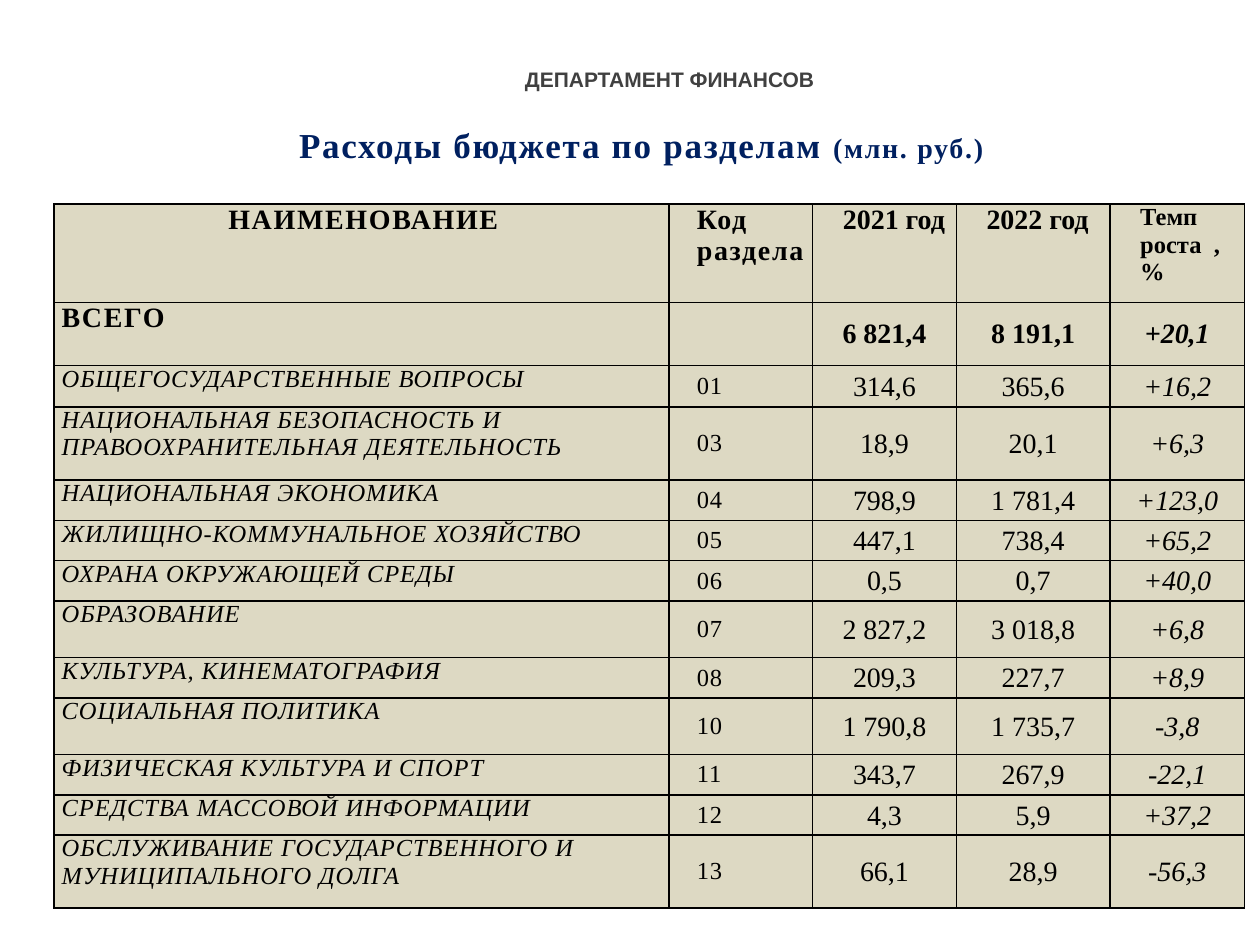
from collections import namedtuple
from dataclasses import dataclass

from lxml import etree
from pptx import Presentation
from pptx.dml.color import RGBColor
from pptx.enum.text import MSO_ANCHOR, PP_ALIGN
from pptx.oxml.ns import qn
from pptx.util import Inches, Pt

CENTER, LEFT = PP_ALIGN.CENTER, PP_ALIGN.LEFT
TOP, MIDDLE = MSO_ANCHOR.TOP, MSO_ANCHOR.MIDDLE
PAGE_WIDTH, PAGE_HEIGHT = 10, 7.5
TITLE_ONLY_LAYOUT = 5

Box = namedtuple("Box", "left top width height")


@dataclass(frozen=True)
class Theme:
    sans: str = "Arial"
    serif: str = "Times New Roman"
    ink: str = "000000"
    gray: str = "404040"
    navy: str = "002060"
    paper: str = "FFFFFF"
    sand: str = "DDD9C3"
    title: int = 20
    large: int = 16
    body: int = 14
    caption: int = 12
    border: float = 1


THEME = Theme()


@dataclass(frozen=True)
class Style:
    size: float = THEME.large
    bold: bool = False
    italic: bool = False
    spacing: float = 0
    color: str = THEME.ink
    font: str = THEME.serif
    align: int = LEFT
    anchor: int = TOP
    indent: float = 0
    margin: float = 0


HEADING = Style(size=THEME.title, bold=True, spacing=1, color=THEME.navy)
UNIT = Style(size=THEME.large, bold=True, spacing=1, color=THEME.navy)
DEPARTMENT = Style(size=THEME.caption, bold=True, color=THEME.gray, font=THEME.sans)

YEAR_HEADER = Style(bold=True, indent=0.24)
HEADER_STYLES = (
    Style(bold=True, spacing=1, align=CENTER, indent=0.03),
    Style(bold=True, spacing=1, indent=0.22),
    YEAR_HEADER,
    YEAR_HEADER,
    Style(size=THEME.body, bold=True, indent=0.24),
)
CODE = Style(size=THEME.body, spacing=0.5, anchor=MIDDLE, indent=0.22)


def figure_styles(bold):
    """Styles of the two year columns and the growth column."""
    amount = Style(bold=bold, align=CENTER, anchor=MIDDLE, margin=0.01)
    growth = Style(bold=bold, italic=True, align=CENTER, anchor=MIDDLE, margin=0.01)
    return amount, amount, growth


TOTAL_STYLES = (Style(bold=True, spacing=1, indent=0.06), CODE, *figure_styles(True))
SECTION_STYLES = (
    Style(size=THEME.body, italic=True, spacing=0.5, indent=0.06),
    CODE,
    *figure_styles(False),
)

COLUMN_WEIGHTS = (4.88, 1.14, 1.14, 1.22, 1.07)
HEADER = ("НАИМЕНОВАНИЕ", "Код\nраздела", "2021 год", "2022 год", "Темп роста  , %")
TOTAL = ("ВСЕГО", "", "6 821,4", "8 191,1", "+20,1")
SECTIONS = (
    (0.33, "ОБЩЕГОСУДАРСТВЕННЫЕ ВОПРОСЫ", "01", "314,6", "365,6", "+16,2"),
    (0.58, "НАЦИОНАЛЬНАЯ БЕЗОПАСНОСТЬ И ПРАВООХРАНИТЕЛЬНАЯ ДЕЯТЕЛЬНОСТЬ",
     "03", "18,9", "20,1", "+6,3"),
    (0.32, "НАЦИОНАЛЬНАЯ ЭКОНОМИКА", "04", "798,9", "1 781,4", "+123,0"),
    (0.32, "ЖИЛИЩНО-КОММУНАЛЬНОЕ ХОЗЯЙСТВО", "05", "447,1", "738,4", "+65,2"),
    (0.32, "ОХРАНА ОКРУЖАЮЩЕЙ СРЕДЫ", "06", "0,5", "0,7", "+40,0"),
    (0.45, "ОБРАЗОВАНИЕ", "07", "2 827,2", "3 018,8", "+6,8"),
    (0.32, "КУЛЬТУРА, КИНЕМАТОГРАФИЯ", "08", "209,3", "227,7", "+8,9"),
    (0.45, "СОЦИАЛЬНАЯ ПОЛИТИКА", "10", "1 790,8", "1 735,7", "-3,8"),
    (0.32, "ФИЗИЧЕСКАЯ КУЛЬТУРА И СПОРТ", "11", "343,7", "267,9", "-22,1"),
    (0.32, "СРЕДСТВА МАССОВОЙ ИНФОРМАЦИИ", "12", "4,3", "5,9", "+37,2"),
    (0.58, "ОБСЛУЖИВАНИЕ ГОСУДАРСТВЕННОГО И МУНИЦИПАЛЬНОГО ДОЛГА",
     "13", "66,1", "28,9", "-56,3"),
)
ROWS = (
    (0.78, HEADER, HEADER_STYLES),
    (0.5, TOTAL, TOTAL_STYLES),
    *((height, texts, SECTION_STYLES) for height, *texts in SECTIONS),
)


def add_span(para, text, style):
    span = para.add_run()
    span.text = text
    font = span.font
    font.name, font.size = style.font, Pt(style.size)
    font.bold, font.italic = style.bold, style.italic
    font.color.rgb = RGBColor.from_string(style.color)
    if style.spacing:
        font._element.set("spc", str(round(style.spacing * 100)))


def set_margins(holder, margin, left=None):
    holder.margin_left = Inches(margin if left is None else left)
    holder.margin_right = holder.margin_top = Inches(margin)
    holder.margin_bottom = 0


def add_department(page, box):
    label = page.shapes.add_textbox(*map(Inches, box))
    frame = label.text_frame
    frame.word_wrap = True
    frame.vertical_anchor = MIDDLE
    para = frame.paragraphs[0]
    para.alignment = CENTER
    add_span(para, "ДЕПАРТАМЕНТ ФИНАНСОВ", DEPARTMENT)


def format_title(page, box):
    title = page.shapes.title
    title.left, title.top, title.width, title.height = map(Inches, box)
    title.fill.solid()
    title.fill.fore_color.rgb = RGBColor.from_string(THEME.paper)
    frame = title.text_frame
    frame.word_wrap = True
    frame.vertical_anchor = MIDDLE
    set_margins(frame, 0, left=0.18)
    para = frame.paragraphs[0]
    para.alignment = CENTER
    para.line_spacing = 1
    para.space_after = Pt(2.1)
    add_span(para, "Расходы бюджета по разделам ", HEADING)
    add_span(para, "(млн. руб.)", UNIT)


def draw_borders(cell):
    properties = cell._tc.get_or_add_tcPr()
    for position, side in enumerate(("lnL", "lnR", "lnT", "lnB")):
        line = etree.Element(qn(f"a:{side}"), w=str(Pt(THEME.border)))
        fill = etree.SubElement(line, qn("a:solidFill"))
        etree.SubElement(fill, qn("a:srgbClr"), val=THEME.ink)
        properties.insert(position, line)


def fill_cell(cell, text, style):
    cell.fill.solid()
    cell.fill.fore_color.rgb = RGBColor.from_string(THEME.sand)
    cell.vertical_anchor = style.anchor
    set_margins(cell, style.margin)
    draw_borders(cell)
    frame = cell.text_frame
    for index, line in enumerate(text.split("\n")):
        para = frame.add_paragraph() if index else frame.paragraphs[0]
        para.alignment = style.align
        para._p.get_or_add_pPr().set("marL", str(Inches(style.indent)))
        if line:
            add_span(para, line, style)
        else:
            para.font.size = Pt(style.size)


def add_budget_table(page, box):
    shape = page.shapes.add_table(len(ROWS), len(COLUMN_WEIGHTS), *map(Inches, box))
    table = shape.table
    for column, weight in zip(table.columns, COLUMN_WEIGHTS):
        column.width = Inches(box.width * weight / sum(COLUMN_WEIGHTS))
    total_height = sum(height for height, _, _ in ROWS)
    for row, (height, texts, styles) in zip(table.rows, ROWS):
        row.height = Inches(box.height * height / total_height)
        for cell, text, style in zip(row.cells, texts, styles):
            fill_cell(cell, text, style)


def main():
    deck = Presentation()
    deck.slide_width, deck.slide_height = Inches(PAGE_WIDTH), Inches(PAGE_HEIGHT)
    page = deck.slides.add_slide(deck.slide_layouts[TITLE_ONLY_LAYOUT])
    add_department(page, Box(3.27, 0.39, 4.09, 0.47))
    format_title(page, Box(1.93, 0.95, 6.14, 0.4))
    add_budget_table(page, Box(0.43, 1.62, 9.45, 5.59))
    deck.save("out.pptx")


if __name__ == "__main__":
    main()
